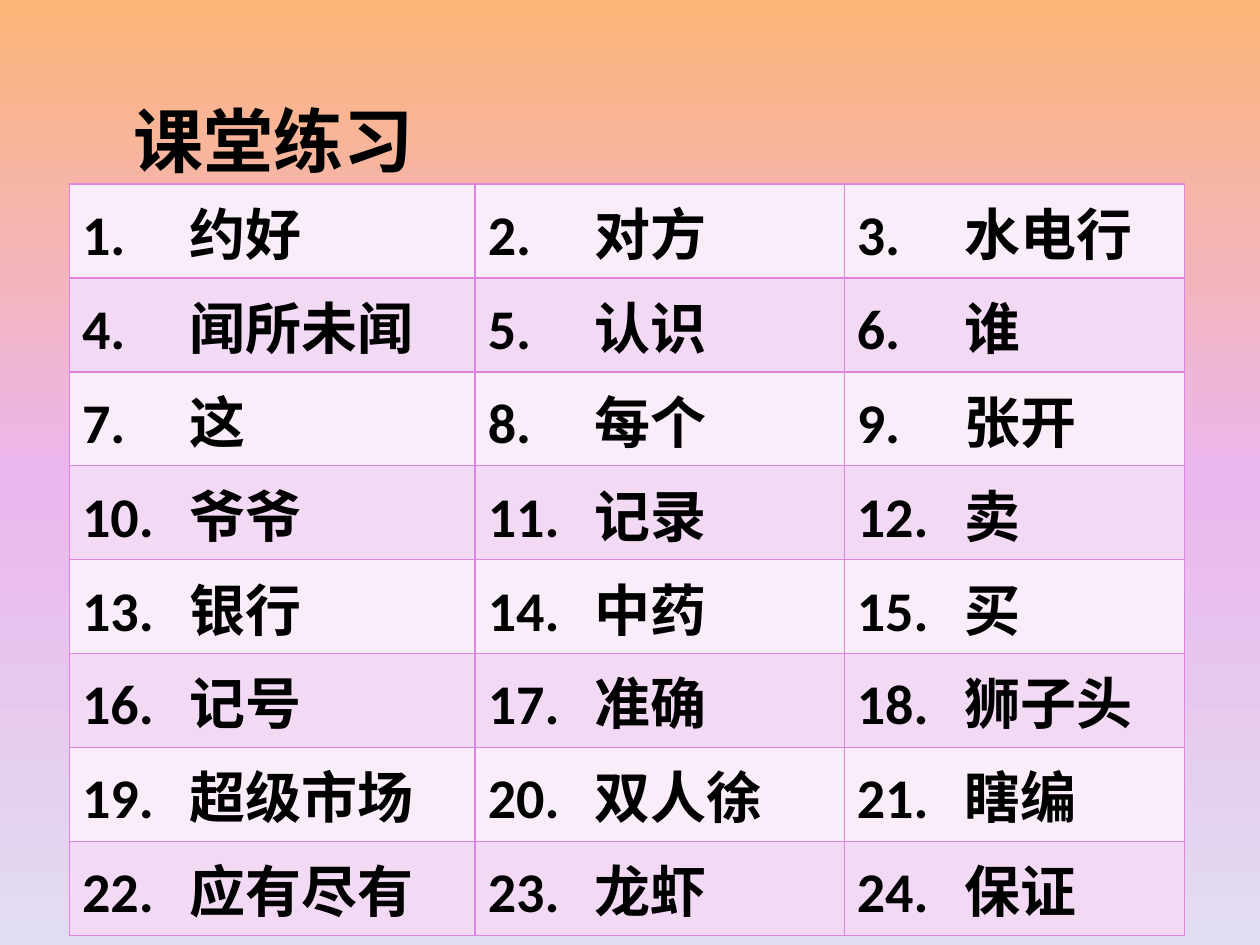
"""Build the classroom exercise slide with its numbered vocabulary table."""
from copy import deepcopy
from dataclasses import dataclass

from lxml import etree
from pptx import Presentation
from pptx.dml.color import RGBColor
from pptx.enum.text import MSO_ANCHOR, MSO_AUTO_SIZE, PP_ALIGN
from pptx.oxml.ns import qn
from pptx.util import Cm, Pt

MIDDLE = MSO_ANCHOR.MIDDLE
NO_FIT = MSO_AUTO_SIZE.NONE
LEFT = PP_ALIGN.LEFT
TITLE_ONLY = 5


@dataclass(frozen=True)
class Theme:
    font: str = "Calibri"
    ink: str = "000000"
    backdrop: tuple = ("FDB477", "EBB6ED", "E1DDF1")
    bands: tuple = ("F9EDF9", "F2D9F4")
    border: str = "DE85E1"
    title_size: int = 40
    word_size: int = 32
    border_width: int = 1


THEME = Theme()
WORDS = [
    ["约好", "对方", "水电行"],
    ["闻所未闻", "认识", "谁"],
    ["这", "每个", "张开"],
    ["爷爷", "记录", "卖"],
    ["银行", "中药", "买"],
    ["记号", "准确", "狮子头"],
    ["超级市场", "双人徐", "瞎编"],
    ["应有尽有", "龙虾", "保证"],
]
COLUMN_WIDTHS = [Cm(8.18), Cm(7.44), Cm(6.86)]
ROW_HEIGHT = Cm(1.8)
WORD_INDENT = Cm(2.16)


def add_bold_run(paragraph, text, size):
    run = paragraph.add_run()
    run.text = text
    run.font.name = THEME.font
    run.font.size = Pt(size)
    run.font.bold = True
    run.font.color.rgb = RGBColor.from_string(THEME.ink)


def add_borders(cell):
    properties = cell._tc.get_or_add_tcPr()
    for position, side in enumerate(("a:lnL", "a:lnR", "a:lnT", "a:lnB")):
        line = etree.Element(qn(side), w=str(Pt(THEME.border_width)))
        fill = etree.SubElement(line, qn("a:solidFill"))
        etree.SubElement(fill, qn("a:srgbClr"), val=THEME.border)
        properties.insert(position, line)


presentation = Presentation()
presentation.slide_width = Cm(25.4)
presentation.slide_height = Cm(19.05)
slide = presentation.slides.add_slide(presentation.slide_layouts[TITLE_ONLY])

backdrop = slide.background.fill
backdrop.gradient()
backdrop.gradient_angle = 270
stop_list = slide.element.find(".//" + qn("a:gsLst"))
stop_list.append(deepcopy(stop_list[0]))
for index, stop in enumerate(backdrop.gradient_stops):
    stop.position = index / 2
    stop.color.rgb = RGBColor.from_string(THEME.backdrop[index])

heading = slide.shapes.title
heading.left, heading.top = Cm(2.44), Cm(0.89)
heading.width, heading.height = Cm(21.59), Cm(4.06)
heading.text_frame.auto_size = NO_FIT
heading.text_frame.vertical_anchor = MIDDLE
heading_line = heading.text_frame.paragraphs[0]
heading_line.alignment = LEFT
heading_line.line_spacing = 0.9
add_bold_run(heading_line, "课堂练习", THEME.title_size)

vocabulary = slide.shapes.add_table(
    len(WORDS), len(COLUMN_WIDTHS), Cm(1.4), Cm(3.71),
    sum(COLUMN_WIDTHS), ROW_HEIGHT * len(WORDS),
).table
for column, width in zip(vocabulary.columns, COLUMN_WIDTHS):
    column.width = width

for row_index, row_words in enumerate(WORDS):
    vocabulary.rows[row_index].height = ROW_HEIGHT
    for column_index, word in enumerate(row_words):
        cell = vocabulary.cell(row_index, column_index)
        cell.fill.solid()
        band = THEME.bands[row_index % len(THEME.bands)]
        cell.fill.fore_color.rgb = RGBColor.from_string(band)
        add_borders(cell)
        entry = cell.text_frame.paragraphs[0]
        tabs = etree.SubElement(entry._p.get_or_add_pPr(), qn("a:tabLst"))
        etree.SubElement(tabs, qn("a:tab"), pos=str(WORD_INDENT), algn="l")
        number = row_index * len(COLUMN_WIDTHS) + column_index + 1
        add_bold_run(entry, f"{number}.\t{word}", THEME.word_size)

presentation.save("out.pptx")
